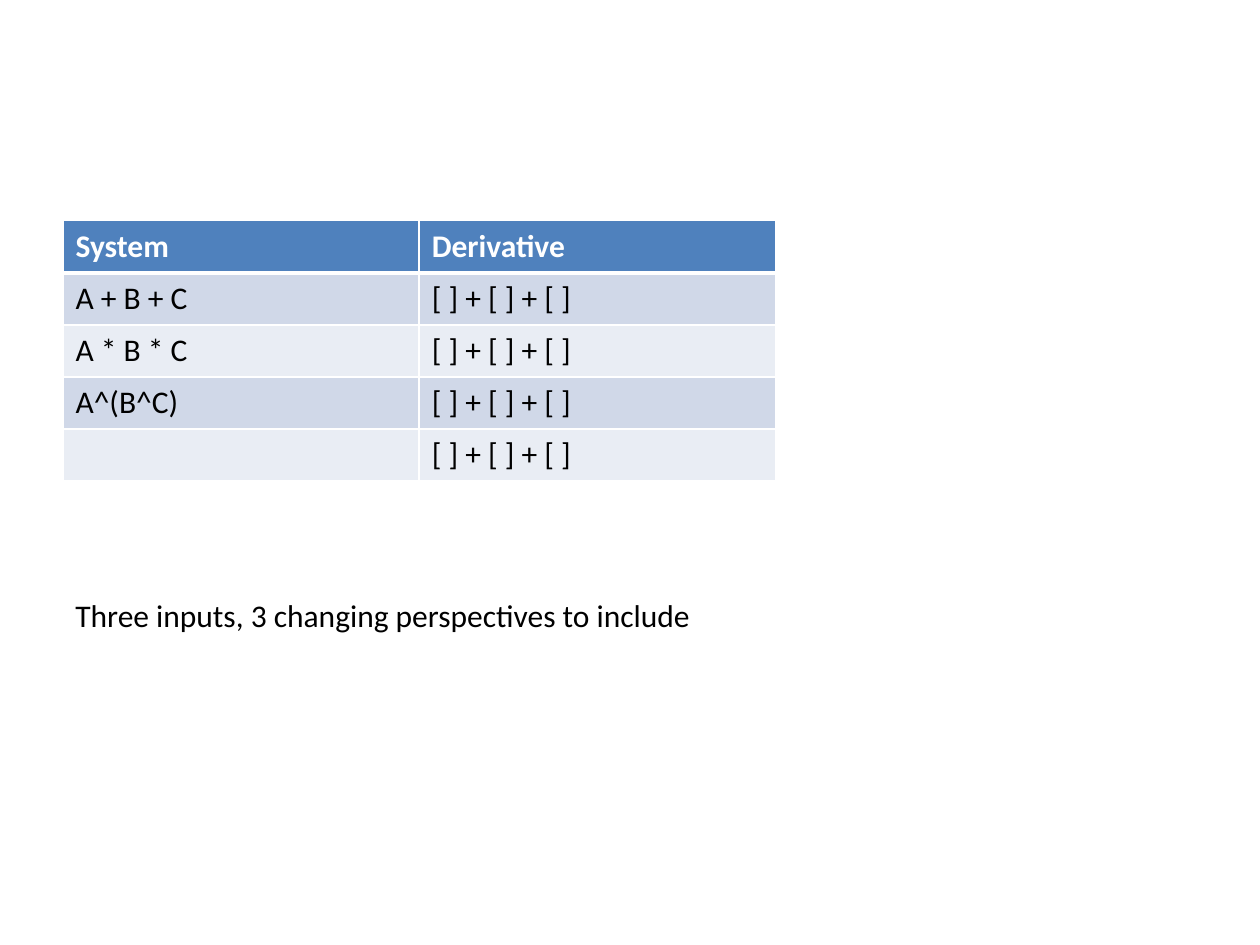
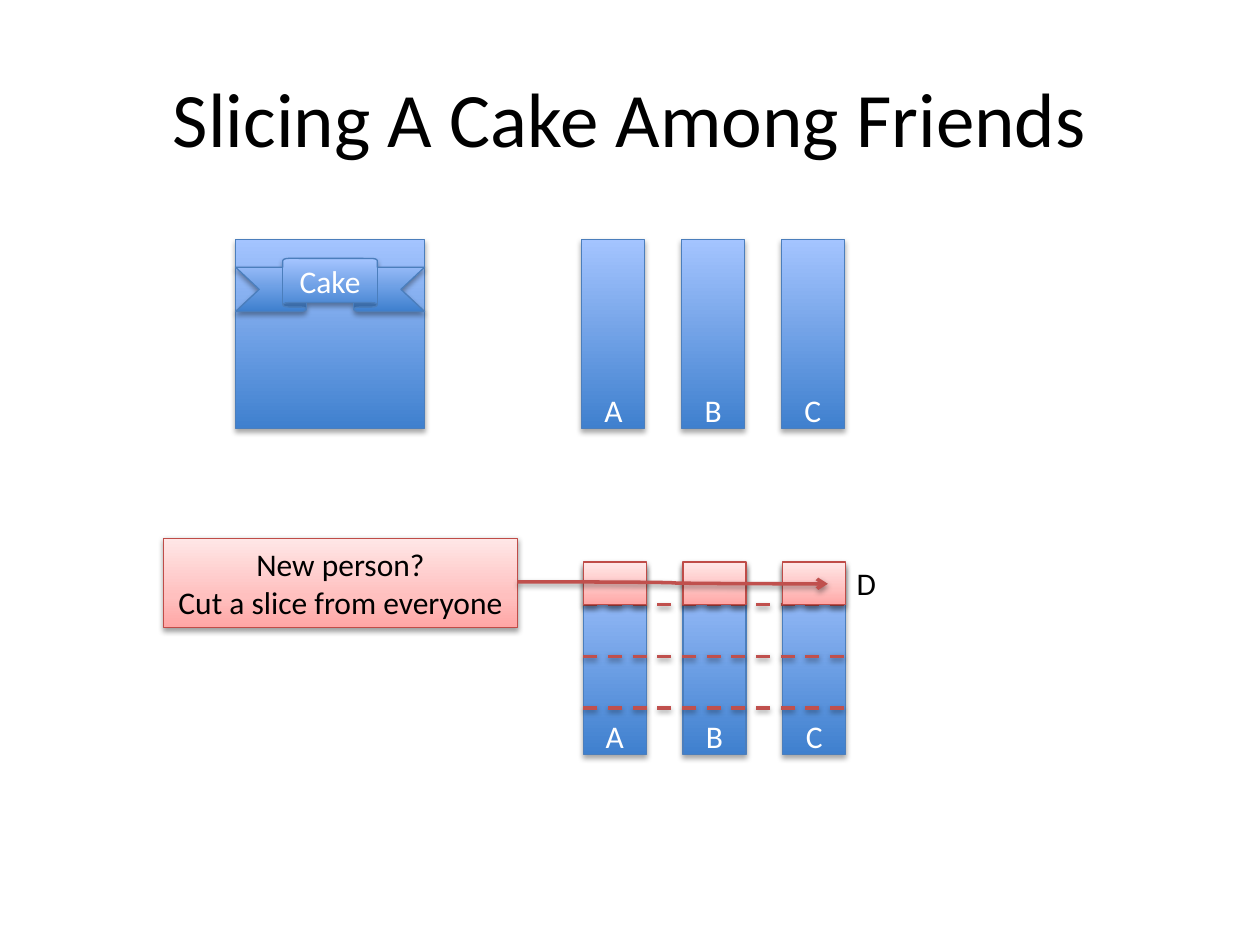
from copy import deepcopy

from lxml.etree import SubElement
from pptx import Presentation
from pptx.dml.color import RGBColor
from pptx.enum.dml import MSO_LINE
from pptx.enum.shapes import MSO_CONNECTOR, MSO_SHAPE
from pptx.enum.text import MSO_ANCHOR, PP_ALIGN
from pptx.oxml.ns import qn
from pptx.util import Cm, Pt

COLOURS = {
    "text": "000000", "white": "FFFFFF",
    "header": "4F81BD", "band": "D0D8E8", "band_light": "E9EDF4",
    "blue_dark": "3F80CE", "blue_light": "A4C4FF", "blue_edge": "4B7EBC",
    "red_dark": "FFA6A5", "red_middle": "FFC0BF", "red_light": "FFE7E7",
    "red_edge": "BF4C48", "red_line": "C0504D",
}


def rgb(name):
    """Return the named colour."""
    return RGBColor.from_string(COLOURS[name])


class Sketch:
    """Holds the deck style and the slide being drawn."""

    font = "Calibri"
    body_size = 18
    title_size = 44

    def __init__(self):
        """Open an empty 4:3 deck."""
        self.deck = Presentation()
        self.deck.slide_width, self.deck.slide_height = Cm(25.4), Cm(19.05)
        self.slide = None

    def page(self):
        """Start a new blank slide."""
        self.slide = self.deck.slides.add_slide(self.deck.slide_layouts[6])

    def set_text(self, frame, text, colour="text", size=body_size, align=PP_ALIGN.LEFT, bold=False):
        """Fill a text frame and format its runs."""
        frame.text = text
        for para in frame.paragraphs:
            para.alignment = align
            for span in para.runs:
                span.font.name = self.font
                span.font.size = Pt(size)
                span.font.bold = bold
                span.font.color.rgb = rgb(colour)

    def label(self, text, left, top, width, height):
        """Add a single line of text."""
        box = self.slide.shapes.add_textbox(Cm(left), Cm(top), Cm(width), Cm(height))
        box.text_frame.word_wrap = False
        self.set_text(box.text_frame, text)

    def title(self, text):
        """Add the slide title."""
        box = self.slide.shapes.add_textbox(Cm(1.27), Cm(0.76), Cm(22.86), Cm(3.18))
        box.text_frame.word_wrap = True
        box.text_frame.vertical_anchor = MSO_ANCHOR.MIDDLE
        self.set_text(box.text_frame, text, size=self.title_size, align=PP_ALIGN.CENTER)

    def shadow(self, item, distance, opacity):
        """Give a shape or connector a soft shadow straight below."""
        effects = SubElement(item._element.spPr, qn("a:effectLst"))
        outer = SubElement(effects, qn("a:outerShdw"), blurRad=str(Pt(3.1)),
                           dist=str(Pt(distance)), dir="5400000", rotWithShape="0")
        black = SubElement(outer, qn("a:srgbClr"), val=COLOURS["text"])
        SubElement(black, qn("a:alpha"), val=str(opacity * 1000))

    def block(self, hue, left, top, width, height, text="", colour="white",
              kind=MSO_SHAPE.RECTANGLE, anchor=MSO_ANCHOR.MIDDLE):
        """Add a shape with a vertical blue or red gradient."""
        shape = self.slide.shapes.add_shape(kind, Cm(left), Cm(top), Cm(width), Cm(height))
        shape.fill.gradient()
        shape.fill.gradient_angle = 90
        for stop, tone in zip(shape.fill.gradient_stops, ("dark", "light")):
            stop.color.rgb = rgb(f"{hue}_{tone}")
        if hue == "red":
            first = shape._element.spPr.find(".//" + qn("a:gs"))
            middle = deepcopy(first)
            middle.set("pos", "35000")
            middle[0].set("val", COLOURS["red_middle"])
            first.addnext(middle)
        shape.line.color.rgb = rgb(f"{hue}_edge")
        shape.line.width = Pt(0.75)
        self.shadow(shape, *((1.8, 35) if hue == "blue" else (1.6, 38)))
        frame = shape.text_frame
        frame.vertical_anchor = anchor
        if anchor == MSO_ANCHOR.BOTTOM:
            frame.margin_bottom = 0
        if text:
            self.set_text(frame, text, colour, align=PP_ALIGN.CENTER)
        return shape

    def line(self, start, end, kind=MSO_CONNECTOR.STRAIGHT, dashed=False, arrow=False):
        """Add a red connector."""
        line = self.slide.shapes.add_connector(kind, *map(Cm, start + end))
        line.line.color.rgb = rgb("red_line")
        line.line.width = Pt(2)
        if dashed:
            line.line.dash_style = MSO_LINE.DASH
        if arrow:
            outline = line._element.spPr.find(qn("a:ln"))
            SubElement(outline, qn("a:tailEnd"), type="arrow")
        self.shadow(line, 1.6, 38)

    def borders(self, cell, widths):
        """Draw white cell borders, widths given per side."""
        properties = cell._tc.get_or_add_tcPr()
        for index, side in enumerate("LRTB"):
            edge = SubElement(properties, qn(f"a:ln{side}"), w=str(Pt(widths.get(side, 1))))
            fill = SubElement(edge, qn("a:solidFill"))
            SubElement(fill, qn("a:srgbClr"), val=COLOURS["white"])
            properties.insert(index, edge)

    def table(self, rows, left, top, column_width, row_height):
        """Add a banded table with a header row."""
        count = len(rows[0])
        table = self.slide.shapes.add_table(
            len(rows), count, Cm(left), Cm(top),
            Cm(column_width * count), Cm(row_height * len(rows))).table
        for column in table.columns:
            column.width = Cm(column_width)
        for index, texts in enumerate(rows):
            header = index == 0
            fill = "header" if header else "band" if index % 2 else "band_light"
            widths = {0: {"B": 3}, 1: {"T": 3}}.get(index, {})
            for cell, text in zip(table.rows[index].cells, texts):
                cell.fill.solid()
                cell.fill.fore_color.rgb = rgb(fill)
                self.borders(cell, widths)
                self.set_text(cell.text_frame, text, "white" if header else "text", bold=header)


def derivative_slide(sketch):
    """Draw the table of systems and their derivatives."""
    sketch.page()
    systems = ["A + B + C", "A * B * C", "A^(B^C)", ""]
    rows = [("System", "Derivative")] + [(system, "[ ] + [ ] + [ ]") for system in systems]
    sketch.table(rows, 1.27, 4.45, 7.18, 1.05)
    sketch.label("Three inputs, 3 changing perspectives to include", 1.27, 11.89, 13.06, 1.02)


def cake_slide(sketch):
    """Draw the cake, its slices and the cut for a new person."""
    sketch.page()
    sketch.title("Slicing A Cake Among Friends")
    cake_left, cake_top, cake_size = 4.75, 4.83, 3.81
    slice_width, slice_step = 1.27, 2.01
    shared_left, shared_top = 11.76, 11.4
    shared_right = shared_left + 2 * slice_step + slice_width
    sketch.block("blue", cake_left, cake_top, cake_size, cake_size)
    for left, top in ((11.73, cake_top), (shared_left, shared_top)):
        for index, friend in enumerate("ABC"):
            sketch.block("blue", left + index * slice_step, top, slice_width, cake_size,
                         friend, anchor=MSO_ANCHOR.BOTTOM)
    for index in range(3):
        height = 12.19 + index * 1.04
        sketch.line((shared_left, height), (shared_right, height), dashed=True)
    for index in range(3):
        sketch.block("red", shared_left + index * slice_step, 11.33, slice_width, 0.86)
    callout = sketch.block("red", 3.3, 10.85, 7.13, 1.8,
                           "New person?\nCut a slice from everyone", "text")
    callout.text_frame.word_wrap = False
    sketch.line((10.43, 11.73), (16.69, 11.77), MSO_CONNECTOR.CURVE, arrow=True)
    sketch.block("blue", cake_left, 5.21, cake_size, 1.07, "Cake", kind=MSO_SHAPE.UP_RIBBON)
    sketch.label("D", 17.02, 11.25, 0.91, 1.02)


def main():
    """Build and save the deck."""
    sketch = Sketch()
    derivative_slide(sketch)
    cake_slide(sketch)
    sketch.deck.save("out.pptx")


if __name__ == "__main__":
    main()
